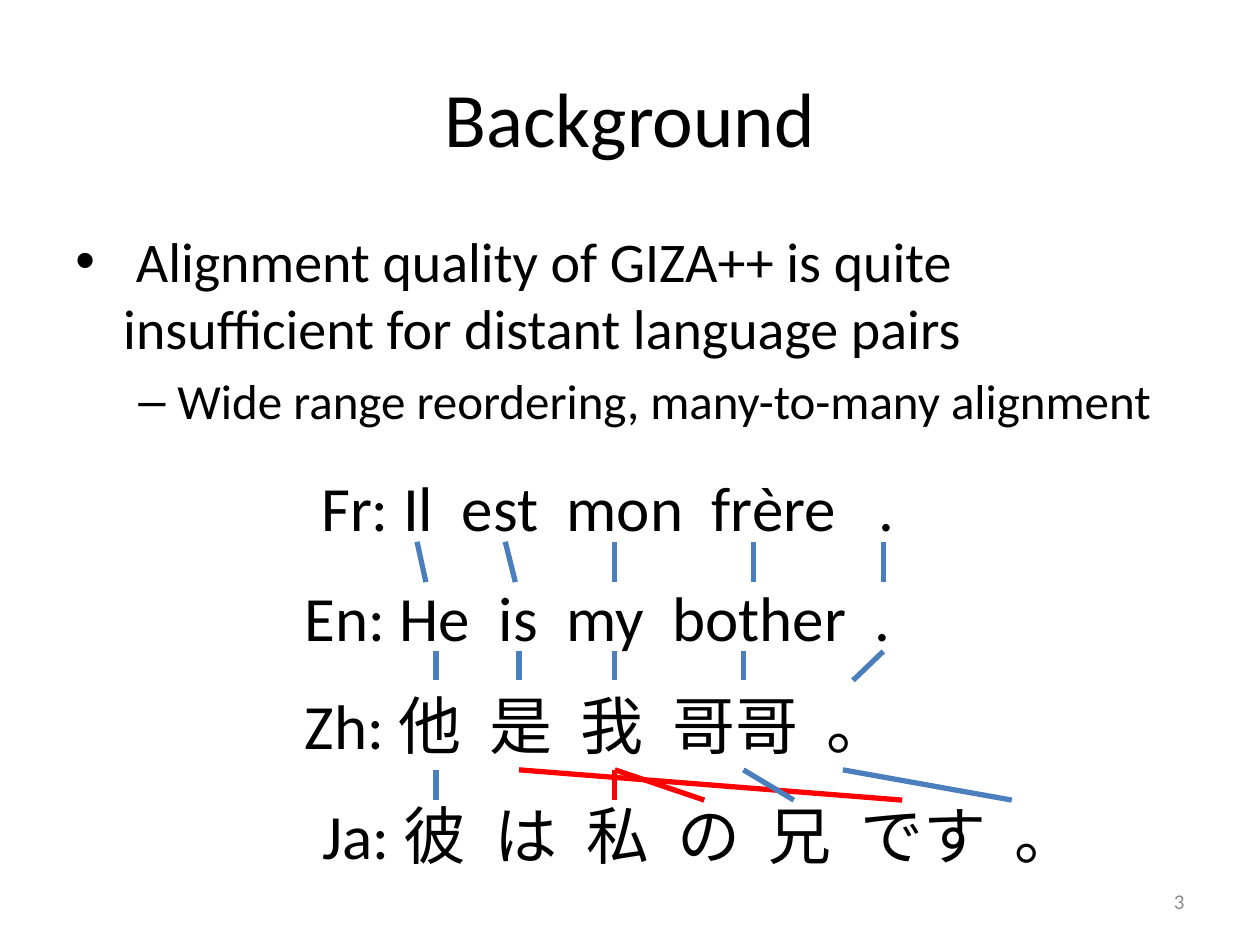
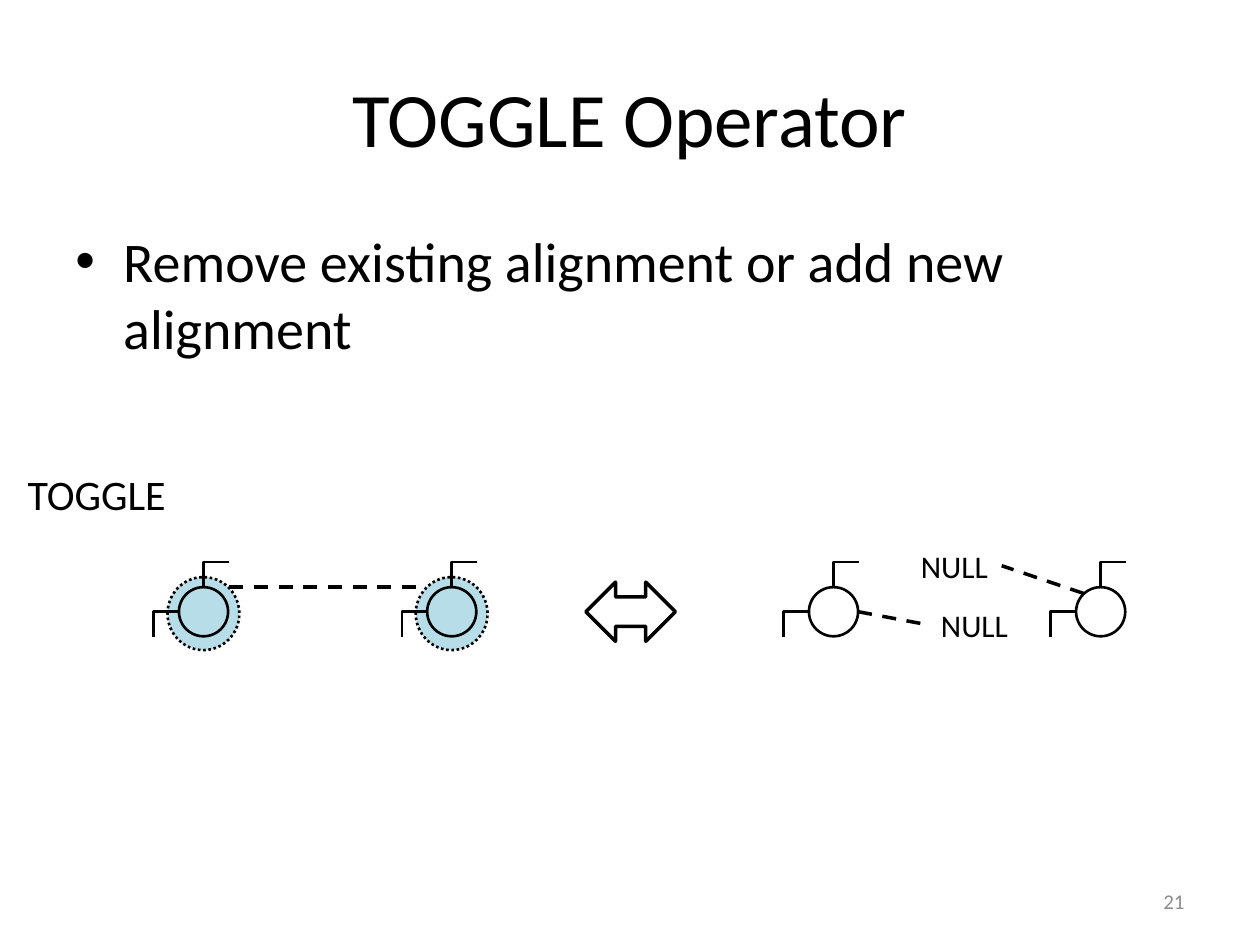
from dataclasses import dataclass
from typing import NamedTuple

from lxml import etree
from pptx import Presentation
from pptx.dml.color import RGBColor
from pptx.enum.dml import MSO_LINE
from pptx.enum.shapes import MSO_CONNECTOR, MSO_SHAPE
from pptx.enum.text import MSO_ANCHOR, MSO_AUTO_SIZE, PP_ALIGN
from pptx.oxml.ns import qn
from pptx.util import Inches, Pt

STRAIGHT, ELBOW = MSO_CONNECTOR.STRAIGHT, MSO_CONNECTOR.ELBOW
OVAL, DOUBLE_ARROW = MSO_SHAPE.OVAL, MSO_SHAPE.LEFT_RIGHT_ARROW
DASH, DOTTED = MSO_LINE.DASH, MSO_LINE.ROUND_DOT
MIDDLE = MSO_ANCHOR.MIDDLE
CENTER, RIGHT = PP_ALIGN.CENTER, PP_ALIGN.RIGHT
LEFT_SIDE, RIGHT_SIDE = 1, 3
TITLE_ONLY = 5

FONT = "Calibri"
COLORS = {
    "text": "000000",
    "page number": "8C8C8C",
    "link": "4B7EBC",
    "crossing link": "FF0000",
    "halo": "B7DEE8",
}


class Box(NamedTuple):
    left: float
    top: float
    width: float
    height: float

    def lengths(self) -> list:
        return [Inches(value) for value in self]


class Bullet(NamedTuple):
    text: str
    level: int = 0


class BulletStyle(NamedTuple):
    symbol: str
    size: int
    margin: float
    hanging: float


@dataclass
class Sentence:
    language: str
    words: str
    box: Box
    last_gap: float = 8.1


class Link(NamedTuple):
    start: float
    end: float
    color: str = "link"


class LinkRow(NamedTuple):
    top: float
    bottom: float
    links: tuple


@dataclass
class Node:
    left: float
    has_halo: bool = False


TITLE_BOX = Box(0.5, 0.3, 9, 1.25)
BODY_BOX = Box(0.5, 1.75, 9, 4.95)
NUMBER_BOX = Box(7.17, 6.95, 2.33, 0.4)
BULLET_STYLES = (BulletStyle("•", 32, 0.38, 0.38), BulletStyle("–", 28, 0.81, 0.31))

WORD_GAP = 8.1  # points added to the single space between words
SENTENCES = (
    Sentence("En:", "He is my bother .", Box(2.32, 4.54, 4.89, 0.71)),
    Sentence("Zh:", "他 是 我 哥哥 。", Box(2.32, 5.4, 4.72, 0.71)),
    Sentence("Fr:", "Il est mon frère .", Box(2.45, 3.67, 4.79, 0.71), 2 * WORD_GAP),
    Sentence("Ja:", "彼 は 私 の 兄 です 。", Box(2.46, 6.27, 6.02, 0.71)),
)
LINK_ROWS = (
    LinkRow(4.3, 4.62, (Link(3.31, 3.38), Link(4.01, 4.09), Link(4.88, 4.88),
                        Link(5.98, 5.98), Link(7.01, 7.01))),
    LinkRow(5.17, 5.4, (Link(3.46, 3.46), Link(4.12, 4.12), Link(4.88, 4.88),
                        Link(5.9, 5.9), Link(7.01, 6.77))),
    LinkRow(6.11, 6.35, (Link(3.46, 3.46), Link(4.12, 7.16, "crossing link"),
                         Link(4.88, 4.88, "crossing link"), Link(5.9, 6.3),
                         Link(6.69, 8.03), Link(4.88, 5.59, "crossing link"))),
)

NODE_TOP, NODE_SIZE, HOOK = 4.66, 0.39, 0.2
NODE_MIDDLE = NODE_TOP + NODE_SIZE / 2
NODES = (Node(1.42, True), Node(3.39, True), Node(6.42), Node(8.54))


def color(name: str) -> RGBColor:
    return RGBColor.from_string(COLORS[name])


def format_font(font, size: float, color_name: str = "text") -> None:
    for name, value in {"name": FONT, "size": Pt(size)}.items():
        setattr(font, name, value)
    font.color.rgb = color(color_name)


def format_line(line, color_name: str, width: float, dash=None) -> None:
    line.color.rgb = color(color_name)
    line.width = Pt(width)
    if dash is not None:
        line.dash_style = dash


def add_run(paragraph, text: str, size: float, color_name: str = "text"):
    run = paragraph.add_run()
    run.text = text
    format_font(run.font, size, color_name)
    return run


def add_label(slide, box: Box, text: str, size: float):
    """Add a one-line text box that grows with its text."""
    label = slide.shapes.add_textbox(*box.lengths())
    label.text_frame.word_wrap = False
    label.text_frame.auto_size = MSO_AUTO_SIZE.SHAPE_TO_FIT_TEXT
    add_run(label.text_frame.paragraphs[0], text, size)
    return label


def add_line(slide, start: tuple, end: tuple, color_name: str, width: float,
             dash=None, kind=STRAIGHT):
    points = [Inches(value) for value in (*start, *end)]
    connector = slide.shapes.add_connector(kind, *points)
    format_line(connector.line, color_name, width, dash)
    etree.SubElement(connector._element.spPr, qn("a:effectLst"))
    return connector


def add_outline(slide, kind, box: Box, width: float, fill: str = "", dash=None) -> None:
    """Add a preset shape with a black outline and an optional fill."""
    shape = slide.shapes.add_shape(kind, *box.lengths())
    shape.shadow.inherit = False
    if fill:
        shape.fill.solid()
        shape.fill.fore_color.rgb = color(fill)
    else:
        shape.fill.background()
    format_line(shape.line, "text", width, dash)


def add_bullet(paragraph, bullet: Bullet) -> None:
    style = BULLET_STYLES[bullet.level]
    paragraph.level = bullet.level
    add_run(paragraph, bullet.text, style.size)
    properties = paragraph._p.get_or_add_pPr()
    properties.set("marL", str(Inches(style.margin)))
    properties.set("indent", str(-Inches(style.hanging)))
    spacing = etree.SubElement(properties, qn("a:spcBef"))
    etree.SubElement(spacing, qn("a:spcPct"), val="20000")
    etree.SubElement(properties, qn("a:buFont"), typeface="Arial")
    etree.SubElement(properties, qn("a:buChar"), char=style.symbol)


def add_content_slide(presentation, title: str, number: int, bullets: tuple):
    """Add a slide with the shared title, bullets and page number."""
    slide = presentation.slides.add_slide(presentation.slide_layouts[TITLE_ONLY])
    heading = slide.shapes.title
    for name, value in zip(("left", "top", "width", "height"), TITLE_BOX.lengths()):
        setattr(heading, name, value)
    heading.text_frame.vertical_anchor = MIDDLE
    paragraph = heading.text_frame.paragraphs[0]
    paragraph.alignment = CENTER
    add_run(paragraph, title, 44)

    frame = slide.shapes.add_textbox(*BODY_BOX.lengths()).text_frame
    frame.word_wrap = True
    for index, bullet in enumerate(bullets):
        add_bullet(frame.add_paragraph() if index else frame.paragraphs[0], bullet)

    frame = slide.shapes.add_textbox(*NUMBER_BOX.lengths()).text_frame
    frame.word_wrap = True
    frame.vertical_anchor = MIDDLE
    frame.paragraphs[0].alignment = RIGHT
    add_run(frame.paragraphs[0], str(number), 12, "page number")
    return slide


def add_sentence(slide, sentence: Sentence) -> None:
    """Add a language label and its words, set apart by widened spaces."""
    first, *others = sentence.words.split()
    label = add_label(slide, sentence.box, f"{sentence.language} {first}", 36)
    paragraph = label.text_frame.paragraphs[0]
    for index, word in enumerate(others, start=1):
        gap = sentence.last_gap if index == len(others) else WORD_GAP
        space = add_run(paragraph, " ", 36)
        space.font._element.set("spc", str(round(gap * 100)))
        add_run(paragraph, word, 36)


def add_hook(slide, left: float, top: float) -> None:
    """Add an elbow from the bottom left, up and then to the right."""
    hook = add_line(slide, (left + HOOK, top + HOOK), (left, top), "text", 1.5, kind=ELBOW)
    properties = hook._element.spPr
    properties.find(qn("a:xfrm")).set("rot", "5400000")
    properties.find(qn("a:prstGeom")).set("prst", "bentConnector2")


def add_node(slide, node: Node) -> None:
    if node.has_halo:
        halo = Box(node.left - 0.09, NODE_TOP - 0.08, 0.57, 0.58)
        add_outline(slide, OVAL, halo, 1.5, "halo", DOTTED)
    add_outline(slide, OVAL, Box(node.left, NODE_TOP, NODE_SIZE, NODE_SIZE), 1.5)
    add_hook(slide, node.left - HOOK, NODE_MIDDLE)
    add_hook(slide, node.left + NODE_SIZE / 2, NODE_TOP - HOOK)


def build_background(presentation) -> None:
    slide = add_content_slide(presentation, "Background", 3, (
        Bullet(" Alignment quality of GIZA++ is quite insufficient for distant language pairs"),
        Bullet("Wide range reordering, many-to-many alignment", 1),
    ))
    for sentence in SENTENCES:
        add_sentence(slide, sentence)
    for row in LINK_ROWS:
        for link in row.links:
            add_line(slide, (link.start, row.top), (link.end, row.bottom), link.color, 3)


def build_toggle(presentation) -> None:
    slide = add_content_slide(presentation, "TOGGLE Operator", 21, (
        Bullet("Remove existing alignment or add new alignment"),
    ))
    add_label(slide, Box(0.12, 3.67, 1.31, 0.5), "TOGGLE", 24)
    for node in NODES:
        add_node(slide, node)
    add_line(slide, (1.82, NODE_TOP), (3.38, NODE_TOP), "text", 2, DASH)
    add_outline(slide, DOUBLE_ARROW, Box(4.65, 4.62, 0.71, 0.47), 2)

    lower_null = add_label(slide, Box(7.37, 4.76, 0.74, 0.4), "NULL", 18)
    upper_null = add_label(slide, Box(7.21, 4.29, 0.74, 0.4), "NULL", 18)
    lower_link = add_line(slide, (6.81, NODE_MIDDLE), (7.37, 4.96), "text", 2, DASH)
    lower_link.end_connect(lower_null, LEFT_SIDE)
    upper_link = add_line(slide, (8.6, 4.71), (7.95, 4.49), "text", 2, DASH)
    upper_link.end_connect(upper_null, RIGHT_SIDE)


def main() -> None:
    presentation = Presentation()
    presentation.slide_width = Inches(10)
    presentation.slide_height = Inches(7.5)
    build_background(presentation)
    build_toggle(presentation)
    presentation.save("out.pptx")


if __name__ == "__main__":
    main()
